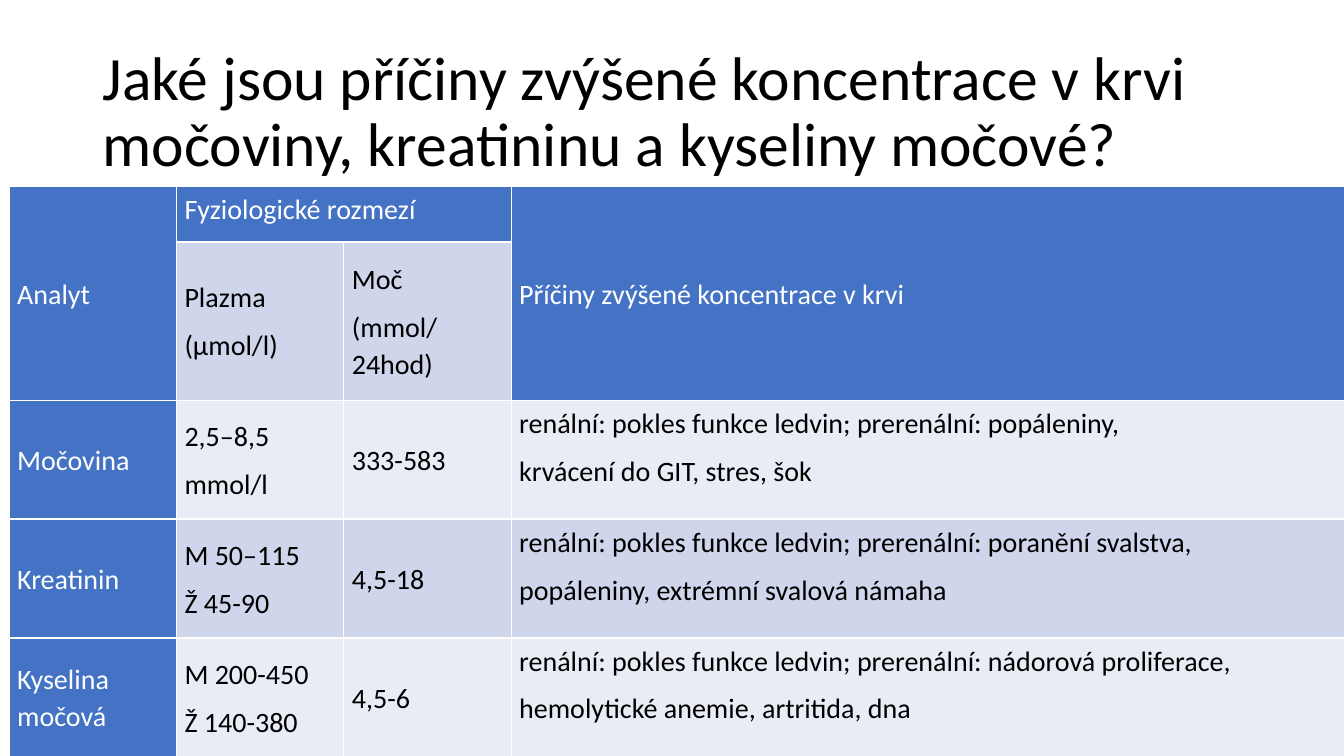
from lxml import etree
from pptx import Presentation
from pptx import util as u
from pptx.dml.color import RGBColor
from pptx.enum import text
from pptx.oxml.ns import qn

TITLE = "Jaké jsou příčiny zvýšené koncentrace v\u00a0krvi močoviny, kreatininu a kyseliny močové?"
ROWS = [
    ["Analyt", "Fyziologické rozmezí", None, "Příčiny zvýšené koncentrace v krvi"],
    [None, "Plazma\n(μmol/l)", "Moč\n(mmol/24hod)", None],
    ["Močovina", "2,5–8,5\nmmol/l", "333-583",
     "renální: pokles funkce ledvin; prerenální: popáleniny,\nkrvácení do GIT, stres, šok"],
    ["Kreatinin", "M 50–115\nŽ 45-90", "4,5-18",
     "renální: pokles funkce ledvin; prerenální: poranění svalstva,\n"
     "popáleniny, extrémní svalová námaha"],
    ["Kyselina močová", "M 200-450\nŽ 140-380", "4,5-6",
     "renální: pokles funkce ledvin; prerenální: nádorová proliferace,\n"
     "hemolytické anemie, artritida,\u00a0dna"],
]
MERGES = [((0, 0), (1, 0)), ((0, 1), (0, 2)), ((0, 3), (1, 3))]
COLS = [1.66, 1.66, 1.66, 8.27]
HEIGHTS = [0.55, 1.57, 1.18, 1.18, 1.18]
HEADER, BANDS = "4472C4", ["E9EBF5", "CFD5EA"]
WHITE, BLACK = "FFFFFF", "000000"


def rgb(value):
    """Turn a hex string into a colour."""
    return RGBColor.from_string(value)


def write(tf, content, size=20, color=BLACK, spacing=1.07, after=8):
    """Write one paragraph per line of content."""
    tf.word_wrap = True
    for i, line in enumerate(content.split("\n")):
        p = tf.add_paragraph() if i else tf.paragraphs[0]
        p.line_spacing, p.space_after = spacing, u.Pt(after)
        r = p.add_run()
        r.text = line
        r.font.name, r.font.size = "Calibri", u.Pt(size)
        r.font.color.rgb = rgb(color)


def add_borders(cell, color=WHITE, width=1):
    """Line all four sides of a cell."""
    props = cell._tc.get_or_add_tcPr()
    for i, side in enumerate("LRTB"):
        ln = etree.Element(qn(f"a:ln{side}"), w=str(u.Pt(width)))
        fill = etree.SubElement(ln, qn("a:solidFill"))
        etree.SubElement(fill, qn("a:srgbClr"), val=color)
        props.insert(i, ln)


def add_title(slide):
    """Add the question above the table."""
    box = slide.shapes.add_textbox(*map(u.Inches, (0.92, 0.4, 11.5, 1.45)))
    box.text_frame.vertical_anchor = text.MSO_ANCHOR.MIDDLE
    write(box.text_frame, TITLE, size=44, spacing=0.9, after=0)


def add_analytes(slide):
    """Add the table of analytes, ranges and causes."""
    frame = slide.shapes.add_table(
        len(ROWS), len(COLS), u.Inches(0.09), u.Inches(1.85),
        u.Inches(sum(COLS)), u.Inches(sum(HEIGHTS)))
    table = frame.table
    for col, width in zip(table.columns, COLS):
        col.width = u.Inches(width)
    for row, height in zip(table.rows, HEIGHTS):
        row.height = u.Inches(height)
    for first, last in MERGES:
        table.cell(*first).merge(table.cell(*last))
    for i, row in enumerate(ROWS):
        for j, content in enumerate(row):
            cell = table.cell(i, j)
            is_header = i == 0 or j == 0 or (i, j) == (1, 3)
            cell.fill.solid()
            cell.fill.fore_color.rgb = rgb(HEADER if is_header else BANDS[i % 2])
            add_borders(cell)
            if content is None:
                continue
            cell.margin_left = cell.margin_right = u.Inches(0.08)
            cell.margin_top = cell.margin_bottom = u.Inches(0.04)
            at_top = (i, j) == (0, 1) or (i > 1 and j == 3)
            cell.vertical_anchor = text.MSO_ANCHOR.TOP if at_top else text.MSO_ANCHOR.MIDDLE
            write(cell.text_frame, content, color=WHITE if is_header else BLACK)


def main():
    """Build and save the slide."""
    prs = Presentation()
    prs.slide_width, prs.slide_height = u.Inches(13.33), u.Inches(7.5)
    s = prs.slides.add_slide(prs.slide_layouts[6])
    add_title(s)
    add_analytes(s)
    prs.save("out.pptx")


if __name__ == "__main__":
    main()
